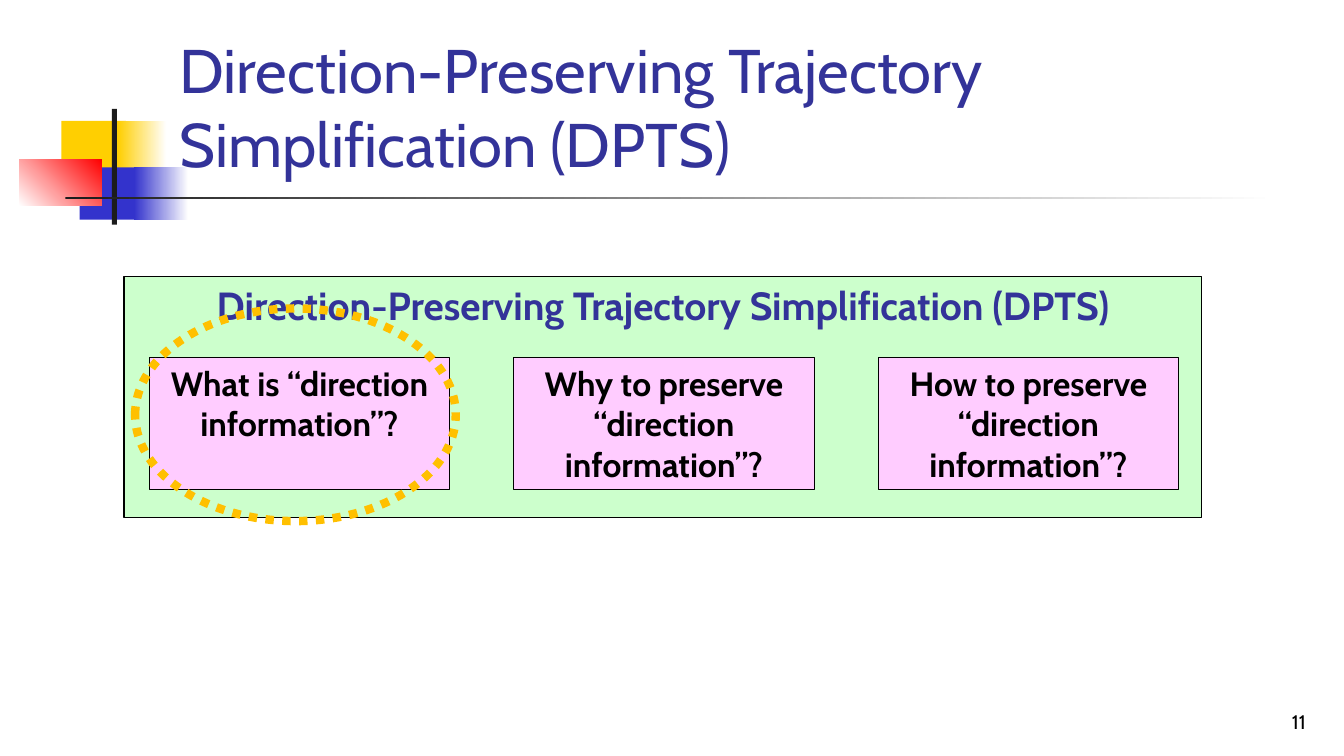
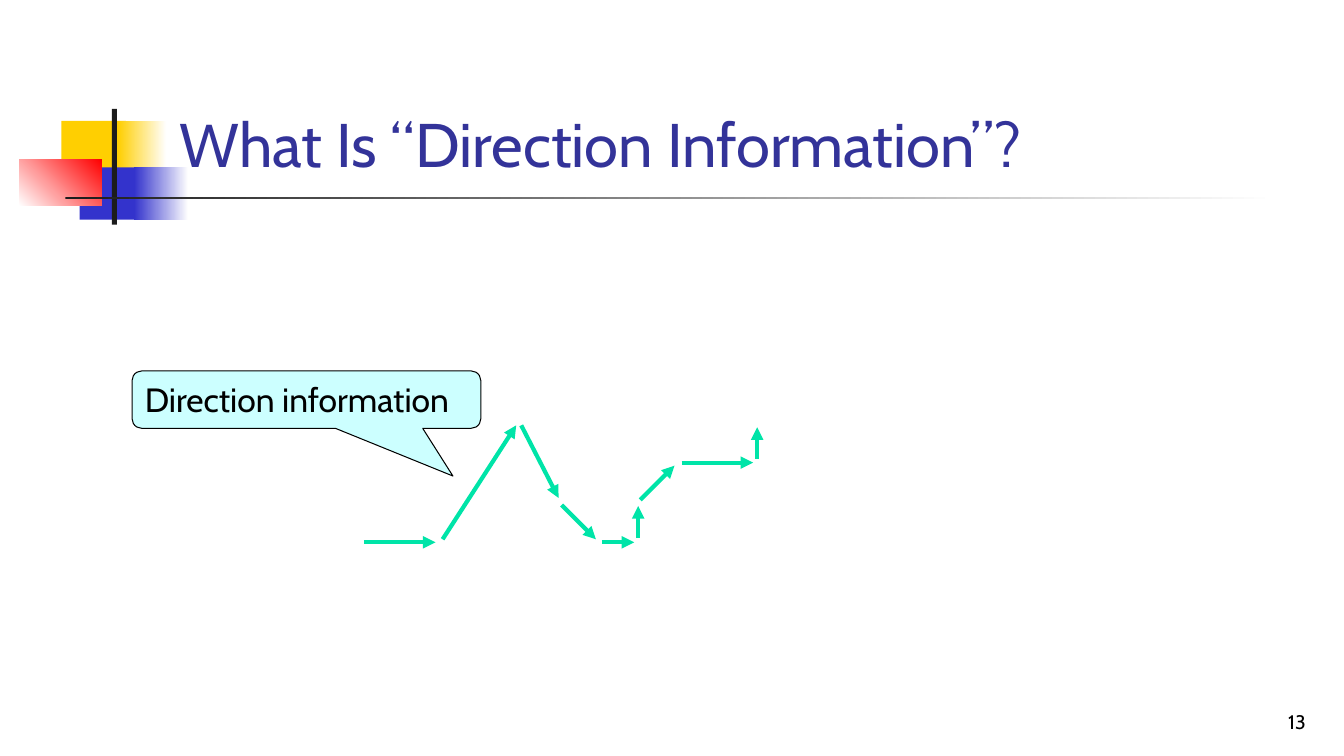
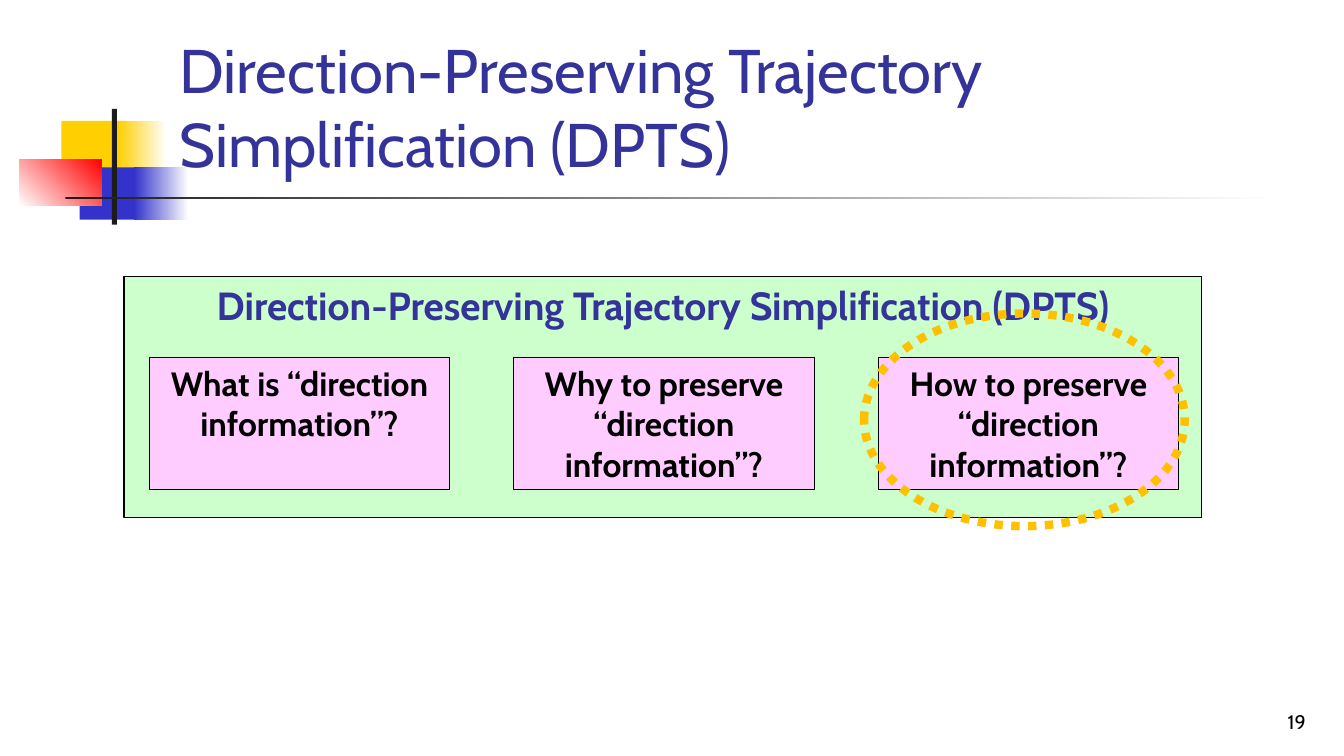
from pptx import Presentation
from pptx.dml.color import RGBColor
from pptx.enum.dml import MSO_LINE
from pptx.enum.shapes import MSO_CONNECTOR, MSO_SHAPE
from pptx.enum.text import MSO_ANCHOR, MSO_AUTO_SIZE, PP_ALIGN
from pptx.oxml.ns import qn
from pptx.util import Inches, Pt
from lxml.etree import SubElement

FONT = "Cabin"
BLACK, WHITE, INK, NAVY = "000000", "FFFFFF", "1C1C1C", "333399"
YELLOW, BLUE, RED = "FFCF01", "3333CC", "FF0000"
GREEN, PINK, CYAN, TEAL, ORANGE = "CCFFCC", "FFCCFF", "CCFFFF", "00E4A8", "FFC000"

TOPIC = "Direction-Preserving Trajectory Simplification (DPTS)"
QUESTIONS = [
    "What is “direction information”?",
    "Why to preserve “direction information”?",
    "How to preserve “direction information”?",
]
FIRST_CARD, LAST_CARD = 1.48, 8.71
CARD_PITCH = (LAST_CARD - FIRST_CARD) / (len(QUESTIONS) - 1)

DECORATION = [
    ((0.61, 1.2, 0.64, 0.52), (YELLOW,), 0),
    ((1.17, 1.2, 0.48, 0.52), (YELLOW, WHITE), 0),
    ((0.79, 1.66, 0.62, 0.52), (BLUE,), 0),
    ((1.33, 1.66, 0.54, 0.52), (BLUE, WHITE), 0),
    ((0.19, 1.58, 0.82, 0.46), (WHITE, RED), 45),
    ((1.11, 1.08, 0.05, 1.15), (INK,), 0),
    ((0.65, 1.95, 12, 0.03), (INK, WHITE), 0),
]
MOVES = [
    ((3.61, 5.38), (4.32, 5.38)),
    ((4.39, 5.35), (5.12, 4.22)),
    ((5.17, 4.22), (5.54, 4.94)),
    ((5.57, 5.01), (5.91, 5.35)),
    ((5.97, 5.38), (6.29, 5.38)),
    ((6.33, 5.34), (6.33, 5.02)),
    ((6.35, 4.96), (6.69, 4.62)),
    ((6.76, 4.59), (7.47, 4.59)),
    ((7.51, 4.55), (7.51, 4.24)),
]


def rgb(code):
    return RGBColor.from_string(code)


def inches(values):
    return [Inches(value) for value in values]


def write(holder, text, size, color=BLACK, bold=False,
          align=PP_ALIGN.LEFT, anchor=MSO_ANCHOR.TOP):
    frame = holder.text_frame
    frame.word_wrap = True
    frame.auto_size = MSO_AUTO_SIZE.NONE
    frame.vertical_anchor = anchor
    line = frame.paragraphs[0]
    line.text = text
    line.alignment = align
    line.font.name = FONT
    line.font.size = Pt(size)
    line.font.bold = bold
    line.font.color.rgb = rgb(color)


def add_block(slide, box, fill=None, outline=None, width=0.75, kind=MSO_SHAPE.RECTANGLE):
    block = slide.shapes.add_shape(kind, *inches(box))
    block.shadow.inherit = False
    if fill:
        block.fill.solid()
        block.fill.fore_color.rgb = rgb(fill)
    else:
        block.fill.background()
    if outline:
        block.line.color.rgb = rgb(outline)
        block.line.width = Pt(width)
    else:
        block.line.fill.background()
    return block


def add_arrow(slide, start, end):
    arrow = slide.shapes.add_connector(MSO_CONNECTOR.STRAIGHT, *inches(start + end))
    arrow.line.color.rgb = rgb(TEAL)
    arrow.line.width = Pt(3)
    SubElement(arrow.line._get_or_add_ln(), qn("a:tailEnd"), type="triangle")
    SubElement(arrow.element.spPr, qn("a:effectLst"))


def decorate(layout, slide):
    for box, colors, angle in DECORATION:
        block = add_block(slide, box, colors[0])
        if len(colors) > 1:
            block.fill.gradient()
            block.fill.gradient_angle = angle
            for stop, color, position in zip(block.fill.gradient_stops, colors, (0, 1)):
                stop.color.rgb = rgb(color)
                stop.position = position
        layout.shapes.element.append(block.element)


def place_title(layout):
    title = layout.placeholders[0]
    title.left, title.top, title.width, title.height = inches((1.68, 0.23, 11.36, 1.6))


def add_page(deck, layout, title, number):
    slide = deck.slides.add_slide(layout)
    write(slide.shapes.title, title, 44, NAVY, anchor=MSO_ANCHOR.BOTTOM)
    page_number = slide.shapes.add_textbox(*inches((10.27, 6.83, 2.78, 0.5)))
    write(page_number, str(number), 14, align=PP_ALIGN.RIGHT, anchor=MSO_ANCHOR.BOTTOM)
    return slide


def add_outline(slide, current, ring_top):
    panel = add_block(slide, (1.23, 2.74, 10.69, 2.39), GREEN, BLACK)
    write(panel, TOPIC, 28, NAVY, True, PP_ALIGN.CENTER)
    lefts = [FIRST_CARD + i * CARD_PITCH for i in range(len(QUESTIONS))]
    for left, question in zip(lefts, QUESTIONS):
        card = add_block(slide, (left, 3.55, 2.98, 1.31), PINK, BLACK)
        write(card, question, 24, bold=True, align=PP_ALIGN.CENTER)
    ring = add_block(slide, (lefts[current] - 0.14, ring_top, 3.18, 2.11),
                     outline=ORANGE, width=6, kind=MSO_SHAPE.OVAL)
    ring.line.dash_style = MSO_LINE.ROUND_DOT


def add_trajectory(slide):
    for start, end in MOVES:
        add_arrow(slide, start, end)
    callout = add_block(slide, (1.31, 3.68, 3.46, 0.57), CYAN, BLACK,
                        kind=MSO_SHAPE.ROUNDED_RECTANGULAR_CALLOUT)
    for i, value in enumerate((0.42, 1.33, 0.17)):
        callout.adjustments[i] = value
    write(callout, "Direction information", 24)


def main():
    deck = Presentation()
    deck.slide_width, deck.slide_height = inches((13.33, 7.5))
    layout = deck.slide_layouts[5]
    place_title(layout)

    what = add_page(deck, layout, TOPIC, 11)
    decorate(layout, what)
    add_outline(what, 0, 3.06)
    add_trajectory(add_page(deck, layout, "What Is “Direction Information”?", 13))
    add_outline(add_page(deck, layout, TOPIC, 19), 2, 3.11)
    deck.save("out.pptx")


if __name__ == "__main__":
    main()
